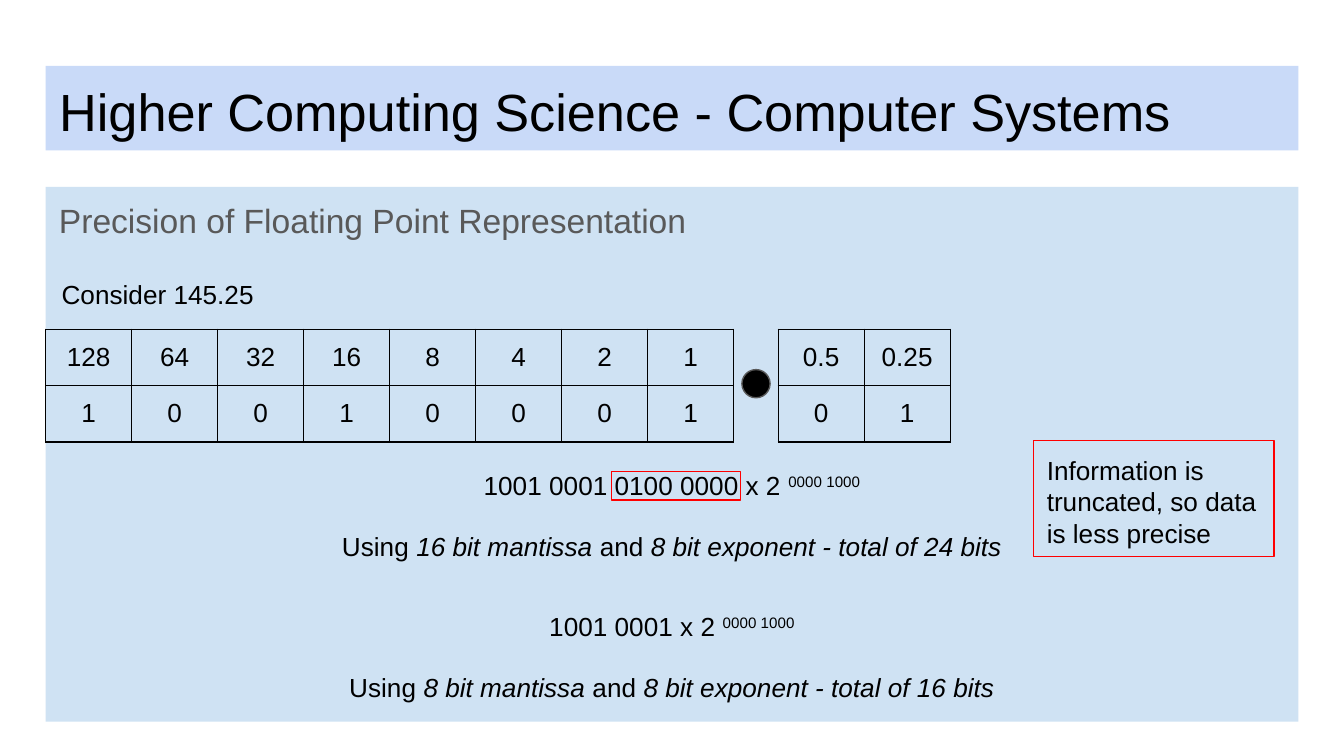
from lxml import etree
from pptx import Presentation
from pptx import util as u
from pptx.dml.color import RGBColor
from pptx.enum import shapes, text
from pptx.oxml.ns import qn

BLACK = RGBColor(0, 0, 0)
GREY = RGBColor(0x59, 0x59, 0x59)
RED = RGBColor(0xFF, 0, 0)
TITLE_BLUE = RGBColor(0xC9, 0xDA, 0xF8)
PANEL_BLUE = RGBColor(0xCF, 0xE2, 0xF3)
INSET = u.Inches(0.1)
MARGINS = dict.fromkeys(
    ("margin_left", "margin_right", "margin_top", "margin_bottom"), INSET)
FRAME_FORMAT = dict(MARGINS, word_wrap=True, auto_size=text.MSO_AUTO_SIZE.NONE,
                    vertical_anchor=text.MSO_ANCHOR.TOP)
LEFT, WIDTH = 0.34, 9.32
COLUMN, ROW, GRID_TOP = 0.64, 0.42, 2.45


def write(frame, paragraphs, size=14, color=BLACK, align=text.PP_ALIGN.LEFT, gap=0):
    """Fill a frame with paragraphs, each a list of (words, style) runs."""
    for name, value in FRAME_FORMAT.items():
        setattr(frame, name, value)
    for index, runs in enumerate(paragraphs):
        paragraph = frame.add_paragraph() if index else frame.paragraphs[0]
        paragraph.alignment = align
        if index:
            paragraph.space_before = u.Pt(gap)
        for words, style in runs:
            run = paragraph.add_run()
            run.text = words
            run_format = dict(name="Arial", size=u.Pt(size), italic=style == "italic")
            for name, value in run_format.items():
                setattr(run.font, name, value)
            run.font.color.rgb = color
            if style == "super":
                run.font._element.set("baseline", "30000")


def add_block(kind, left, top, width, height, fill=None, line=None):
    block = slide.shapes.add_shape(kind, *map(u.Inches, (left, top, width, height)))
    block.shadow.inherit = False
    if fill is None:
        block.fill.background()
    else:
        block.fill.solid()
        block.fill.fore_color.rgb = fill
    if line is None:
        block.line.fill.background()
    else:
        block.line.color.rgb = line
        block.line.width = u.Pt(0.75)
    return block


prs = Presentation()
prs.slide_width = u.Inches(10)
prs.slide_height = prs.slide_width * 9 // 16
slide = prs.slides.add_slide(prs.slide_layouts[5])

# Heading and panel
title = slide.shapes.title
title_place = dict(left=LEFT, top=0.49, width=WIDTH, height=0.63)
for name, value in title_place.items():
    setattr(title, name, u.Inches(value))
title.fill.solid()
title.fill.fore_color.rgb = TITLE_BLUE
write(title.text_frame, [[("Higher Computing Science - Computer Systems", "")]], size=28)

panel = add_block(shapes.MSO_SHAPE.RECTANGLE, LEFT, 1.39, WIDTH, 3.98, PANEL_BLUE)
write(panel.text_frame, [[("Precision of Floating Point Representation", "")]],
      size=18, color=GREY)

example = slide.shapes.add_textbox(*map(u.Inches, (0.36, 1.97, 4.72, 0.34)))
write(example.text_frame, [[("Consider 145.25", "")]])

# Place values: whole part and fraction
place_values = [
    (LEFT, ["128 64 32 16 8 4 2 1", "1 0 0 1 0 0 0 1"]),
    (5.79, ["0.5 0.25", "0 1"]),
]
for left, lines in place_values:
    rows = [line.split() for line in lines]
    count = len(rows[0])
    bits = slide.shapes.add_table(2, count, u.Inches(left), u.Inches(GRID_TOP),
                                  u.Inches(COLUMN * count), u.Inches(ROW * 2)).table
    bits.first_row = bits.horz_banding = False
    for r, row in enumerate(rows):
        for c, value in enumerate(row):
            cell = bits.cell(r, c)
            for name, margin in MARGINS.items():
                setattr(cell, name, margin)
            write(cell.text_frame, [[(value, "")]], align=text.PP_ALIGN.CENTER)
            properties = cell._tc.get_or_add_tcPr()
            for edge in ("a:lnL", "a:lnR", "a:lnT", "a:lnB"):
                border = etree.SubElement(properties, qn(edge), w=str(u.Pt(0.75)))
                solid = etree.SubElement(border, qn("a:solidFill"))
                etree.SubElement(solid, qn("a:srgbClr"), val=str(BLACK))
            cell.fill.background()

add_block(shapes.MSO_SHAPE.OVAL, 5.52, 2.75, 0.21, 0.21, BLACK, GREY)

# Mantissa and exponent, before and after truncation
representations = [
    (3.39, "1001 0001 0100 0000", 16, 24),
    (4.44, "1001 0001", 8, 16),
]
for top, mantissa, mantissa_bits, total in representations:
    formula = slide.shapes.add_textbox(*map(u.Inches, (0.32, top, 9.36, 0.45)))
    write(formula.text_frame, [
        [(f"{mantissa} x 2 ", ""), ("0000 1000", "super")],
        [("Using ", ""), (f"{mantissa_bits} bit mantissa", "italic"), (" and ", ""),
         (f"8 bit exponent - total of {total} bits", "italic")],
    ], align=text.PP_ALIGN.CENTER, gap=16)

# Lost bits and their consequence
add_block(shapes.MSO_SHAPE.RECTANGLE, 4.55, 3.51, 0.96, 0.21, line=RED)
warning = add_block(shapes.MSO_SHAPE.RECTANGLE, 7.69, 3.28, 1.79, 0.86, line=RED)
write(warning.text_frame,
      [[("Information is truncated, so data is less precise", "")]])

prs.save("out.pptx")
